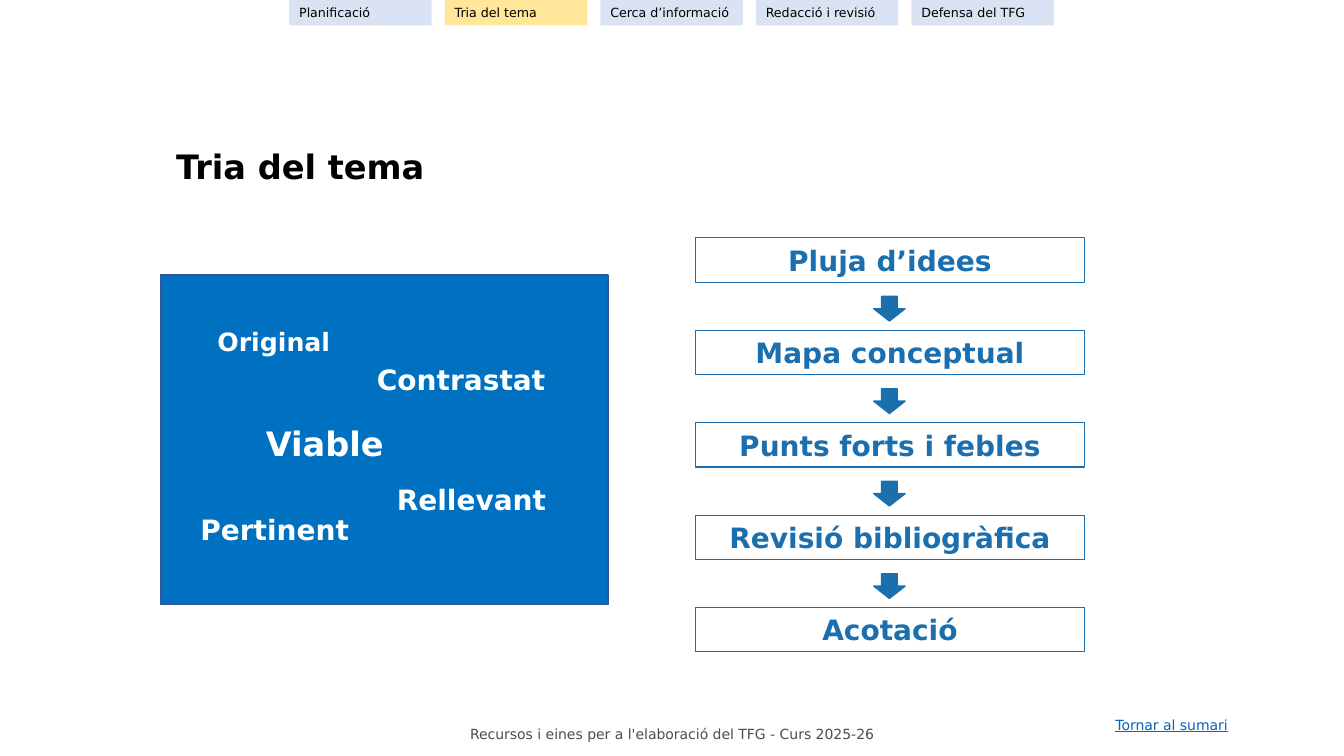
import pptx
import pptx.dml.color
import pptx.enum.shapes
import pptx.enum.text
import pptx.util

Cm = pptx.util.Cm
Pt = pptx.util.Pt
RGBColor = pptx.dml.color.RGBColor
Preset = pptx.enum.shapes.MSO_SHAPE
Anchor = pptx.enum.text.MSO_ANCHOR
Align = pptx.enum.text.PP_ALIGN

BLACK = RGBColor(0x00, 0x00, 0x00)
WHITE = RGBColor(0xFF, 0xFF, 0xFF)
GREY = RGBColor(0x4D, 0x4D, 0x4D)
STEP_BLUE = RGBColor(0x1B, 0x6F, 0xAE)
PANEL_BLUE = RGBColor(0x00, 0x70, 0xC0)
PANEL_EDGE = RGBColor(0x32, 0x54, 0x91)
LINK_BLUE = RGBColor(0x05, 0x63, 0xC1)
TAB_BLUE = RGBColor(0xDA, 0xE3, 0xF3)
TAB_YELLOW = RGBColor(0xFF, 0xE6, 0x99)

FONT = "DejaVu Sans"
TABS = ["Planificació", "Tria del tema", "Cerca d’informació", "Redacció i revisió", "Defensa del TFG"]
ACTIVE_TAB = "Tria del tema"
STEPS = ["Pluja d’idees", "Mapa conceptual", "Punts forts i febles", "Revisió bibliogràfica", "Acotació"]
QUALITIES = [
    ("Pertinent", 4.8, 12.8, 5.28, 1.35, 20),
    ("Original", 5.23, 8.1, 4.39, 1.24, 18),
    ("Viable", 6.45, 10.52, 4.37, 1.55, 24),
    ("Rellevant", 9.75, 12.04, 5.33, 1.35, 20),
    ("Contrastat", 9.25, 9.02, 5.59, 1.35, 20),
]


def set_values(target, values):
    for name, value in values.items():
        setattr(target, name, value)


def write_text(shape, text, size, color, align=Align.LEFT, anchor=Anchor.MIDDLE, wrap=True, **font_values):
    set_values(shape.text_frame, {"word_wrap": wrap, "vertical_anchor": anchor})
    paragraph = shape.text_frame.paragraphs[0]
    paragraph.alignment = align
    run = paragraph.add_run()
    run.text = text
    set_values(run.font, {"name": FONT, "size": Pt(size), **font_values})
    run.font.color.rgb = color


def add_label(slide, box, text, size, color, **text_values):
    shape = slide.shapes.add_textbox(*map(Cm, box))
    write_text(shape, text, size, color, **text_values)


def add_block(slide, preset, box, fill=None, line=None, line_width=1):
    shape = slide.shapes.add_shape(preset, *map(Cm, box))
    shape.shadow.inherit = False
    if fill is None:
        shape.fill.background()
    else:
        shape.fill.solid()
        shape.fill.fore_color.rgb = fill
    if line is None:
        shape.line.fill.background()
    else:
        shape.line.color.rgb = line
        shape.line.width = Pt(line_width)
    return shape


def add_steps(slide):
    pitch = 2.33
    for index, step in enumerate(STEPS):
        if index:
            arrow_top = 7.47 + (index - 1) * pitch
            add_block(slide, Preset.DOWN_ARROW, (22.02, arrow_top, 0.79, 0.62), STEP_BLUE, STEP_BLUE)
        box = (17.53, 5.99 + index * pitch, 9.8, 1.12)
        shape = add_block(slide, Preset.RECTANGLE, box, line=STEP_BLUE, line_width=0.75)
        write_text(shape, step, 20, STEP_BLUE, align=Align.CENTER, bold=True)


def add_qualities(slide):
    add_block(slide, Preset.RECTANGLE, (4.04, 6.93, 11.28, 8.31), PANEL_BLUE, PANEL_EDGE)
    for text, left, top, width, height, size in QUALITIES:
        add_label(slide, (left, top, width, height), text, size, WHITE, anchor=Anchor.TOP, bold=True)


def add_tabs(slide):
    for index, tab in enumerate(TABS):
        fill = TAB_YELLOW if tab == ACTIVE_TAB else TAB_BLUE
        shape = add_block(slide, Preset.RECTANGLE, (7.29 + index * 3.92, 0, 3.59, 0.64), fill)
        write_text(shape, tab, 9, BLACK)


def main():
    presentation = pptx.Presentation()
    set_values(presentation, {"slide_width": Cm(33.87), "slide_height": Cm(19.05)})
    slide = presentation.slides.add_slide(presentation.slide_layouts[6])
    footer = "Recursos i eines per a l'elaboració del TFG - Curs 2025-26"
    add_label(slide, (9.53, 18.14, 14.81, 0.69), footer, 10, GREY, align=Align.CENTER)
    add_label(slide, (27.86, 17.93, 3.45, 0.69), "Tornar al sumari", 10, LINK_BLUE, wrap=False, underline=True)
    add_label(slide, (4.19, 3.56, 23.55, 1.27), "Tria del tema", 24, BLACK, bold=True)
    add_steps(slide)
    add_qualities(slide)
    add_tabs(slide)
    presentation.save("out.pptx")


if __name__ == "__main__":
    main()
